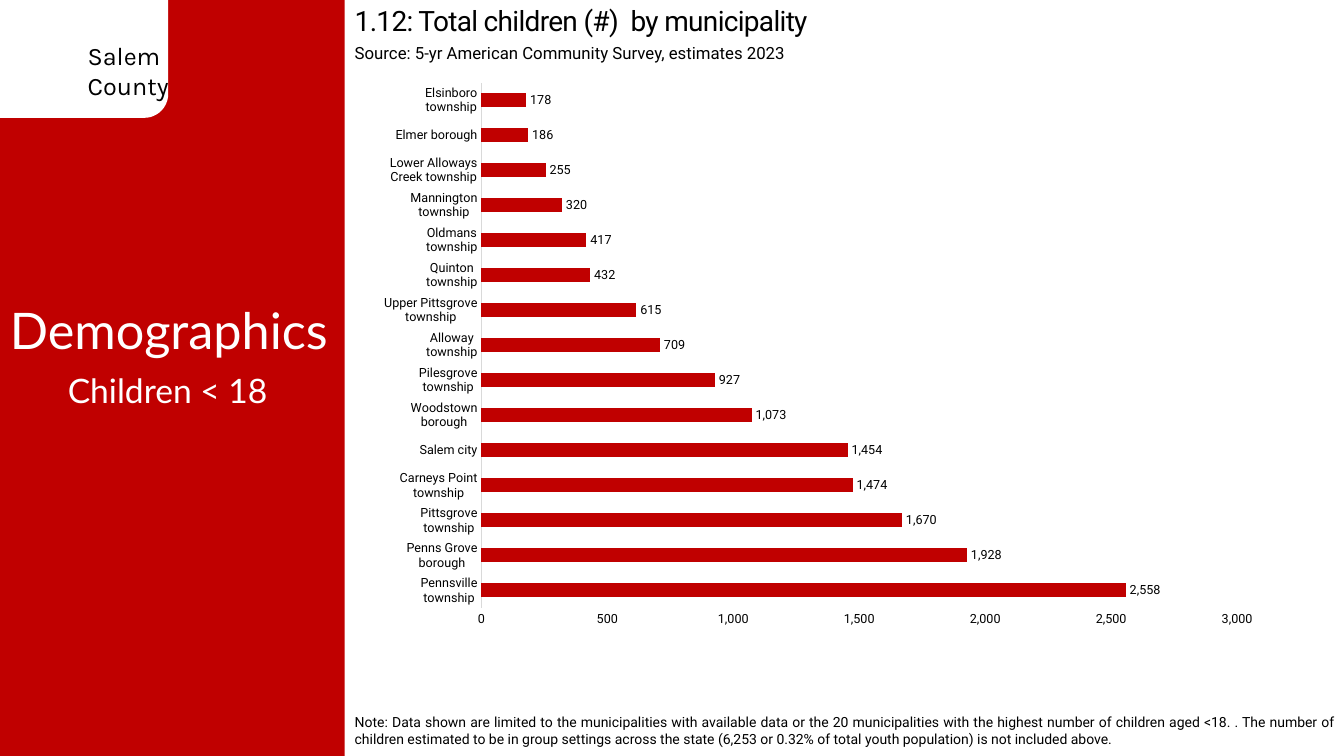
from dataclasses import dataclass

from lxml.etree import SubElement
from pptx import Presentation
from pptx.chart.data import CategoryChartData
from pptx.dml.color import RGBColor
from pptx.enum.chart import XL_CHART_TYPE as ChartType
from pptx.enum.chart import XL_LABEL_POSITION as LabelPosition
from pptx.enum.chart import XL_TICK_MARK as TickMark
from pptx.enum.shapes import MSO_SHAPE as Preset
from pptx.enum.text import MSO_ANCHOR as Anchor
from pptx.enum.text import PP_ALIGN as Align
from pptx.oxml.ns import qn
from pptx.slide import Slide
from pptx.util import Cm, Pt


@dataclass(frozen=True)
class Theme:
    red: RGBColor = RGBColor(0xC0, 0x00, 0x00)
    white: RGBColor = RGBColor(0xFF, 0xFF, 0xFF)
    black: RGBColor = RGBColor(0x00, 0x00, 0x00)
    axis_grey: RGBColor = RGBColor(0xD9, 0xD9, 0xD9)
    section_size: int = 36
    subsection_size: int = 24
    title_size: int = 20
    county_size: int = 18
    source_size: int = 12
    note_size: int = 10
    chart_size: int = 9
    county_font: str = "Karla"
    section_font: str = "Lato"
    body_font: str = "Roboto"


THEME = Theme()
SLIDE_WIDTH, SLIDE_HEIGHT, PANEL_WIDTH = 33.87, 19.05, 8.69


@dataclass(frozen=True)
class Box:
    """Position and size in centimetres."""
    left: float
    top: float
    width: float
    height: float

    def lengths(self) -> tuple[Cm, Cm, Cm, Cm]:
        return Cm(self.left), Cm(self.top), Cm(self.width), Cm(self.height)


@dataclass(frozen=True)
class Panel:
    preset: Preset
    box: Box
    color: RGBColor


@dataclass(frozen=True)
class Label:
    lines: tuple[str, ...]
    box: Box
    size: int
    font: str
    color: RGBColor = THEME.black
    align: Align = Align.LEFT
    anchor: Anchor = Anchor.TOP
    spacing: int = 0  # hundredths of a point


PANELS = (
    Panel(Preset.RECTANGLE, Box(0, 0, PANEL_WIDTH, SLIDE_HEIGHT), THEME.red),
    Panel(Preset.ROUNDED_RECTANGLE, Box(-0.84, -0.64, 5.08, 3.61), THEME.white),
)

LABELS = (
    Label(("Salem", "County"), Box(1.96, 0.89, 2.54, 1.8),
          THEME.county_size, THEME.county_font),
    Label(("Demographics",), Box(0, 7.42, PANEL_WIDTH, 1.8),
          THEME.section_size, THEME.section_font, THEME.white),
    Label(("1.12: Total children (#)  by municipality",),
          Box(PANEL_WIDTH, -0.03, 22.86, 1.12),
          THEME.title_size, THEME.body_font, spacing=-50),
    Label(("Source: 5-yr American Community Survey, estimates 2023",),
          Box(PANEL_WIDTH, 0.94, 17.91, 0.76), THEME.source_size, THEME.body_font),
    Label(("Note: Data shown are limited to the municipalities with available data "
           "or the 20 municipalities with the highest number of children aged <18. . "
           "The number of children estimated to be in group settings across the state "
           "(6,253 or 0.32% of total youth population) is not included above.",),
          Box(PANEL_WIDTH, 17.78, SLIDE_WIDTH - PANEL_WIDTH, 1.27),
          THEME.note_size, THEME.body_font, align=Align.JUSTIFY, anchor=Anchor.MIDDLE),
    Label(("Children < 18",), Box(0.76, 9.19, 6.93, 1.27),
          THEME.subsection_size, THEME.section_font, THEME.white, Align.CENTER),
)

CHART_BOX = Box(9.68, 1.7, 22.58, 14.4)
PLOT_LAYOUT = {"x": 0.107, "y": 0.027, "w": 0.845, "h": 0.919}
CHILDREN = {
    "Pennsville township": 2558,
    "Penns Grove borough": 1928,
    "Pittsgrove township": 1670,
    "Carneys Point township": 1474,
    "Salem city": 1454,
    "Woodstown borough": 1073,
    "Pilesgrove township": 927,
    "Alloway township": 709,
    "Upper Pittsgrove township": 615,
    "Quinton township": 432,
    "Oldmans township": 417,
    "Mannington township": 320,
    "Lower Alloways Creek township": 255,
    "Elmer borough": 186,
    "Elsinboro township": 178,
}


def draw_panel(slide: Slide, panel: Panel) -> None:
    shape = slide.shapes.add_shape(panel.preset, *panel.box.lengths())
    shape.shadow.inherit = False
    shape.fill.solid()
    shape.fill.fore_color.rgb = panel.color
    shape.line.fill.background()


def draw_label(slide: Slide, label: Label) -> None:
    frame = slide.shapes.add_textbox(*label.box.lengths()).text_frame
    frame.word_wrap = True
    frame.vertical_anchor = label.anchor
    frame.text = "\n".join(label.lines)
    for paragraph in frame.paragraphs:
        paragraph.alignment = label.align
        paragraph.font.size = Pt(label.size)
        paragraph.font.name = label.font
        paragraph.font.color.rgb = label.color
        if label.spacing:
            for run in paragraph.runs:
                run.font._element.set("spc", str(label.spacing))


def set_plot_layout(chart) -> None:
    """Fix the inner plot area as fractions of the chart."""
    plot_area = chart._chartSpace.chart.plotArea
    layout = plot_area.find(qn("c:layout"))
    if layout is None:
        layout = plot_area.makeelement(qn("c:layout"))
        plot_area.insert(0, layout)
    manual = SubElement(layout, qn("c:manualLayout"))
    settings = {"layoutTarget": "inner", "xMode": "edge", "yMode": "edge", **PLOT_LAYOUT}
    for name, value in settings.items():
        SubElement(manual, qn(f"c:{name}")).set("val", str(value))


def draw_children_chart(slide: Slide) -> None:
    data = CategoryChartData(number_format="#,##0")
    data.categories = list(CHILDREN)
    data.add_series("Series 1", list(CHILDREN.values()))
    chart = slide.shapes.add_chart(
        ChartType.BAR_CLUSTERED, *CHART_BOX.lengths(), data).chart
    chart.has_legend = False
    chart.has_title = False
    chart.font.name = THEME.body_font
    chart.font.size = Pt(THEME.chart_size)
    chart.font.color.rgb = THEME.black
    set_plot_layout(chart)

    plot = chart.plots[0]
    plot.gap_width = 150
    plot.vary_by_categories = False
    bars = plot.series[0].format.fill
    bars.solid()
    bars.fore_color.rgb = THEME.red
    plot.has_data_labels = True
    labels = plot.data_labels
    labels.show_value = True
    labels.position = LabelPosition.OUTSIDE_END
    labels.number_format = "#,##0"
    labels.number_format_is_linked = False

    for axis in (chart.category_axis, chart.value_axis):
        axis.major_tick_mark = axis.minor_tick_mark = TickMark.NONE
        axis.has_major_gridlines = False
    category_line = chart.category_axis.format.line
    category_line.color.rgb = THEME.axis_grey
    category_line.width = Pt(0.75)
    value_axis = chart.value_axis
    value_axis.format.line.fill.background()
    value_axis.minimum_scale, value_axis.maximum_scale = 0, 3000
    value_axis.major_unit = 500
    value_axis.tick_labels.number_format = "#,##0"
    value_axis.tick_labels.number_format_is_linked = False


def main() -> None:
    presentation = Presentation()
    presentation.slide_width = Cm(SLIDE_WIDTH)
    presentation.slide_height = Cm(SLIDE_HEIGHT)
    slide = presentation.slides.add_slide(presentation.slide_layouts[6])
    for panel in PANELS:
        draw_panel(slide, panel)
    for label in LABELS:
        draw_label(slide, label)
    draw_children_chart(slide)
    presentation.save("out.pptx")


if __name__ == "__main__":
    main()
